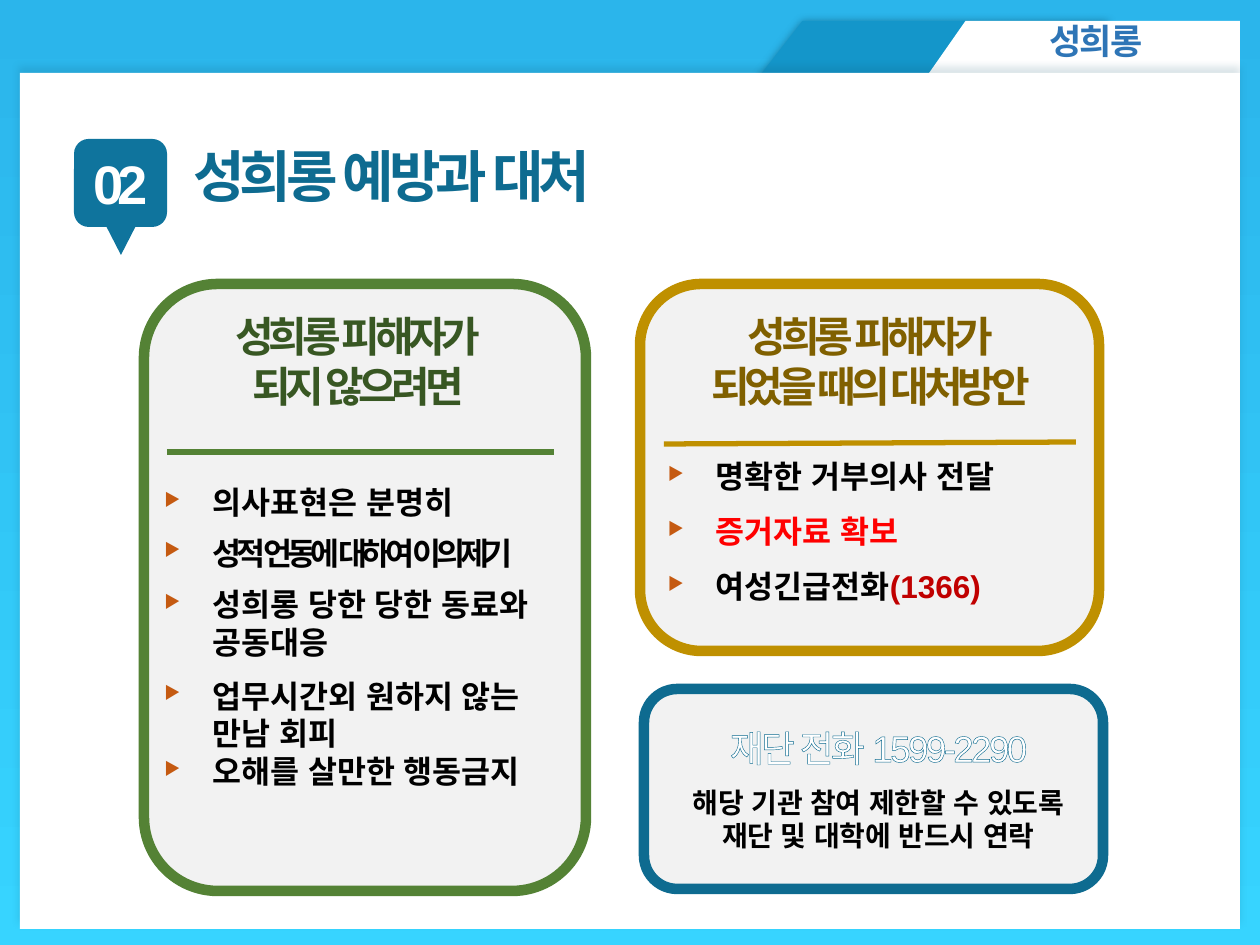
import dataclasses

import lxml.etree
import pptx
import pptx.dml.color
import pptx.enum.shapes
import pptx.enum.text
import pptx.oxml.ns
import pptx.util

SHAPES = pptx.enum.shapes.MSO_SHAPE
ALIGN = pptx.enum.text.PP_ALIGN
ANCHOR = pptx.enum.text.MSO_ANCHOR


@dataclasses.dataclass(frozen=True)
class Theme:
    """Colours and type sizes of the slide."""
    font: str = "Arial"
    sky_top: str = "2BB5EB"
    sky_bottom: str = "37D4FF"
    tab: str = "1496CA"
    shadow: str = "0A4C66"
    white: str = "FFFFFF"
    black: str = "000000"
    panel: str = "F2F2F2"
    badge: str = "0F749D"
    teal: str = "0E6B90"
    topic: str = "2E75B6"
    green: str = "548235"
    dark_green: str = "385723"
    gold: str = "BF9000"
    dark_gold: str = "806000"
    bullet: str = "C55A11"
    red: str = "FF0000"
    dark_red: str = "C00000"
    title_size: int = 32
    badge_size: int = 31
    heading_size: int = 24
    phone_size: int = 21
    topic_size: int = 20
    body_size: int = 18
    note_size: int = 16


THEME = Theme()


def px(length):
    """Turn slide pixels into EMU."""
    return pptx.util.Emu(round(length * 914400 / 126))


def rgb(value):
    """Turn a hex string into a colour."""
    return pptx.dml.color.RGBColor.from_string(value)


def add_xml(parent, tag, **attributes):
    """Append a DrawingML element."""
    return lxml.etree.SubElement(parent, pptx.oxml.ns.qn(tag), attributes)


def add_box(slide, kind, box, fill, line=None):
    """Add a filled preset shape with an optional thick outline."""
    shape = slide.shapes.add_shape(kind, *map(px, box))
    shape.shadow.inherit = False
    shape.fill.solid()
    shape.fill.fore_color.rgb = rgb(fill)
    if line:
        shape.line.color.rgb = rgb(line)
        shape.line.width = pptx.util.Pt(6)
    else:
        shape.line.fill.background()
    return shape


def add_shadow(shape, alpha, blur, distance, direction):
    """Give a shape an outer shadow."""
    effects = shape._element.spPr.find(pptx.oxml.ns.qn("a:effectLst"))
    outer = add_xml(effects, "a:outerShdw", blurRad=str(pptx.util.Pt(blur)),
                    dist=str(pptx.util.Pt(distance)), dir=str(direction * 60000),
                    algn="ctr", rotWithShape="0")
    color = add_xml(outer, "a:srgbClr", val=THEME.shadow)
    add_xml(color, "a:alpha", val=str(alpha * 1000))


def add_run(paragraph, text, size, color, bold=True, spacing=0, outline=None):
    """Add one formatted run."""
    run = paragraph.add_run()
    run.text = text
    run.font.size = pptx.util.Pt(size)
    run.font.bold = bold
    run.font.name = THEME.font
    run.font.color.rgb = rgb(color)
    properties = run._r.get_or_add_rPr()
    add_xml(properties, "a:ea", typeface=THEME.font)
    if spacing:
        properties.set("spc", str(round(spacing * 100)))
    if outline:
        line = add_xml(properties, "a:ln", w=str(pptx.util.Pt(0.75)))
        add_xml(add_xml(line, "a:solidFill"), "a:srgbClr", val=outline)
        properties.insert(0, line)


def set_frame(shape, left=0, top=0, anchor=ANCHOR.TOP):
    """Set wrapping, insets and anchor of a shape's text."""
    frame = shape.text_frame
    frame.word_wrap = True
    frame.margin_left, frame.margin_top = px(left), px(top)
    frame.margin_right = frame.margin_bottom = 0
    frame.vertical_anchor = anchor
    return frame


def next_paragraph(frame, index):
    """Return the first paragraph or add another."""
    return frame.add_paragraph() if index else frame.paragraphs[0]


def add_label(slide, box, lines, size, color, spacing, align=ALIGN.LEFT):
    """Add a text box with one paragraph per line."""
    frame = slide.shapes.add_textbox(*map(px, box)).text_frame
    frame.word_wrap = True
    for index, text in enumerate(lines):
        paragraph = next_paragraph(frame, index)
        paragraph.alignment = align
        add_run(paragraph, text, size, color, spacing=spacing)


def add_bullet(paragraph, gap):
    """Give a paragraph a hanging triangle bullet and space after it."""
    paragraph.alignment = ALIGN.LEFT
    paragraph.space_after = pptx.util.Pt(gap)
    properties = paragraph._p.get_or_add_pPr()
    properties.set("marL", str(px(48)))
    properties.set("indent", str(-px(48)))
    add_xml(add_xml(properties, "a:buClr"), "a:srgbClr", val=THEME.bullet)
    add_xml(properties, "a:buSzPct", val="58000")
    add_xml(properties, "a:buChar", char="▶")


def add_tab(slide, box, fill):
    """Add a header tab with a slanted left edge."""
    left, top, width, height = box
    shift = (width - height) / 2
    tab = add_box(slide, SHAPES.FLOWCHART_MANUAL_INPUT,
                  (left + shift, top - shift, height, width), fill)
    tab.rotation = 90
    tab._element.spPr.find(pptx.oxml.ns.qn("a:xfrm")).set("flipV", "1")
    return tab


def add_page(slide, box):
    """Add the gradient, header tabs, white page and topic label."""
    left, top, width, height = box
    fill = slide.background.fill
    fill.gradient()
    fill.gradient_angle = 270
    for stop, color in zip(fill.gradient_stops, (THEME.sky_top, THEME.sky_bottom)):
        stop.color.rgb = rgb(color)
    add_shadow(add_tab(slide, (left + 706, top - 52, 382, 98), THEME.tab), 52, 5, 0, 0)
    add_tab(slide, (left + 877, top - 52, 343, 98), THEME.white)
    add_shadow(add_box(slide, SHAPES.RECTANGLE, box, THEME.white), 14, 4, 3, 270)
    add_label(slide, (left + 1017, top - 60, 178, 55), ["성희롱"],
              THEME.topic_size, THEME.topic, -1)


def add_title(slide, box):
    """Add the numbered badge and the slide title."""
    left, top, width, height = box
    badge = add_box(slide, SHAPES.FLOWCHART_ALTERNATE_PROCESS,
                    (left, top, 93, 88), THEME.badge)
    paragraph = set_frame(badge, anchor=ANCHOR.MIDDLE).paragraphs[0]
    paragraph.alignment = ALIGN.CENTER
    add_run(paragraph, "02", THEME.badge_size, THEME.white, spacing=-3)
    add_box(slide, SHAPES.FLOWCHART_MERGE, (left + 28, top + 79, 38, 37), THEME.badge)
    add_label(slide, (left + 107, top - 4, width - 107, height), ["성희롱 예방과 대처"],
              THEME.title_size, THEME.teal, -3)


def add_panel(slide, box, color, heading_color, heading, heading_box, rule, inset, items):
    """Add a rounded panel with a heading, a rule and bullets."""
    left, top, width, height = box
    panel = add_box(slide, SHAPES.FLOWCHART_ALTERNATE_PROCESS, box, THEME.panel, color)
    frame = set_frame(panel, *inset)
    for index, (lines, gap, spacing) in enumerate(items):
        paragraph = next_paragraph(frame, index)
        add_bullet(paragraph, gap)
        for number, runs in enumerate(lines):
            if number:
                paragraph.add_line_break()
            for text, text_color in runs:
                add_run(paragraph, text, THEME.body_size, text_color, spacing=spacing)
    x1, y1, x2, y2 = rule
    line = slide.shapes.add_connector(
        pptx.enum.shapes.MSO_CONNECTOR.STRAIGHT,
        px(left + x1), px(top + y1), px(left + x2), px(top + y2))
    line.line.color.rgb = rgb(color)
    line.line.width = pptx.util.Pt(3)
    add_xml(line._element.spPr, "a:effectLst")
    x, y, heading_width, heading_height = heading_box
    add_label(slide, (left + x, top + y, heading_width, heading_height), heading,
              THEME.heading_size, heading_color, -3, ALIGN.CENTER)


def add_contact(slide, box):
    """Add the panel with the telephone number and its note."""
    panel = add_box(slide, SHAPES.FLOWCHART_ALTERNATE_PROCESS, box, THEME.panel, THEME.teal)
    frame = set_frame(panel, 10, anchor=ANCHOR.MIDDLE)
    phone, note = frame.paragraphs[0], frame.add_paragraph()
    phone.alignment = note.alignment = ALIGN.CENTER
    note.space_before = pptx.util.Pt(9)
    add_run(phone, "재단 전화 1599-2290", THEME.phone_size, THEME.white, False, -1.5, THEME.teal)
    add_run(note, "해당 기관 참여 제한할 수 있도록 재단 및 대학에 반드시 연락",
            THEME.note_size, THEME.black)


def main():
    """Build and save the slide."""
    presentation = pptx.Presentation()
    presentation.slide_width, presentation.slide_height = px(1260), px(945)
    slide = presentation.slides.add_slide(presentation.slide_layouts[6])
    black = THEME.black
    add_page(slide, (20, 73, 1220, 856))
    add_title(slide, (74, 139, 596, 81))
    add_panel(slide, (144, 284, 442, 607), THEME.green, THEME.dark_green,
              ["성희롱 피해자가", "되지 않으려면"], (37, 20, 354, 137),
              (23, 168, 410, 168), (-1, 178), [
                  ([[("의사표현은 분명히", black)]], 7, 0),
                  ([[("성적 언동에 대하여 이의제기", black)]], 8, -3),
                  ([[("성희롱 당한 당한 동료와", black)], [("공동대응", black)]], 9, 0),
                  ([[("업무시간외 원하지 않는", black)], [("만남 회피", black)]], 0, 0),
                  ([[("오해를 살만한 행동금지", black)]], 0, 0)])
    add_panel(slide, (640, 284, 459, 367), THEME.gold, THEME.dark_gold,
              ["성희롱 피해자가", "되었을 때의 대처방안"], (25, 20, 411, 139),
              (24, 160, 436, 158), (10, 155), [
                  ([[("명확한 거부의사 전달", black)]], 10, 0),
                  ([[("증거자료 확보", THEME.red)]], 10, 0),
                  ([[("여성긴급전화", black), ("(1366)", THEME.dark_red)]], 0, 0)])
    add_contact(slide, (644, 689, 459, 200))
    presentation.save("out.pptx")


if __name__ == "__main__":
    main()
